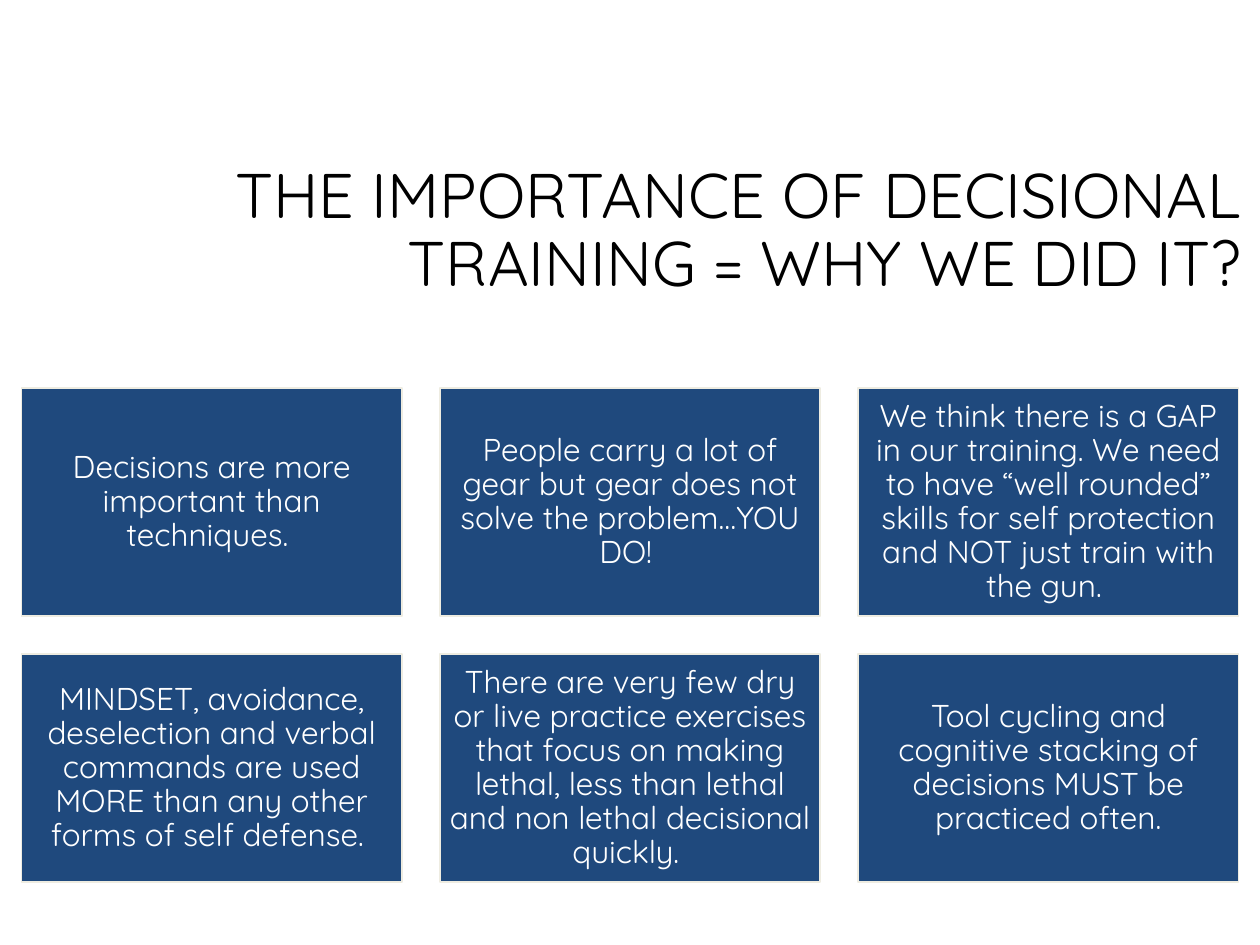
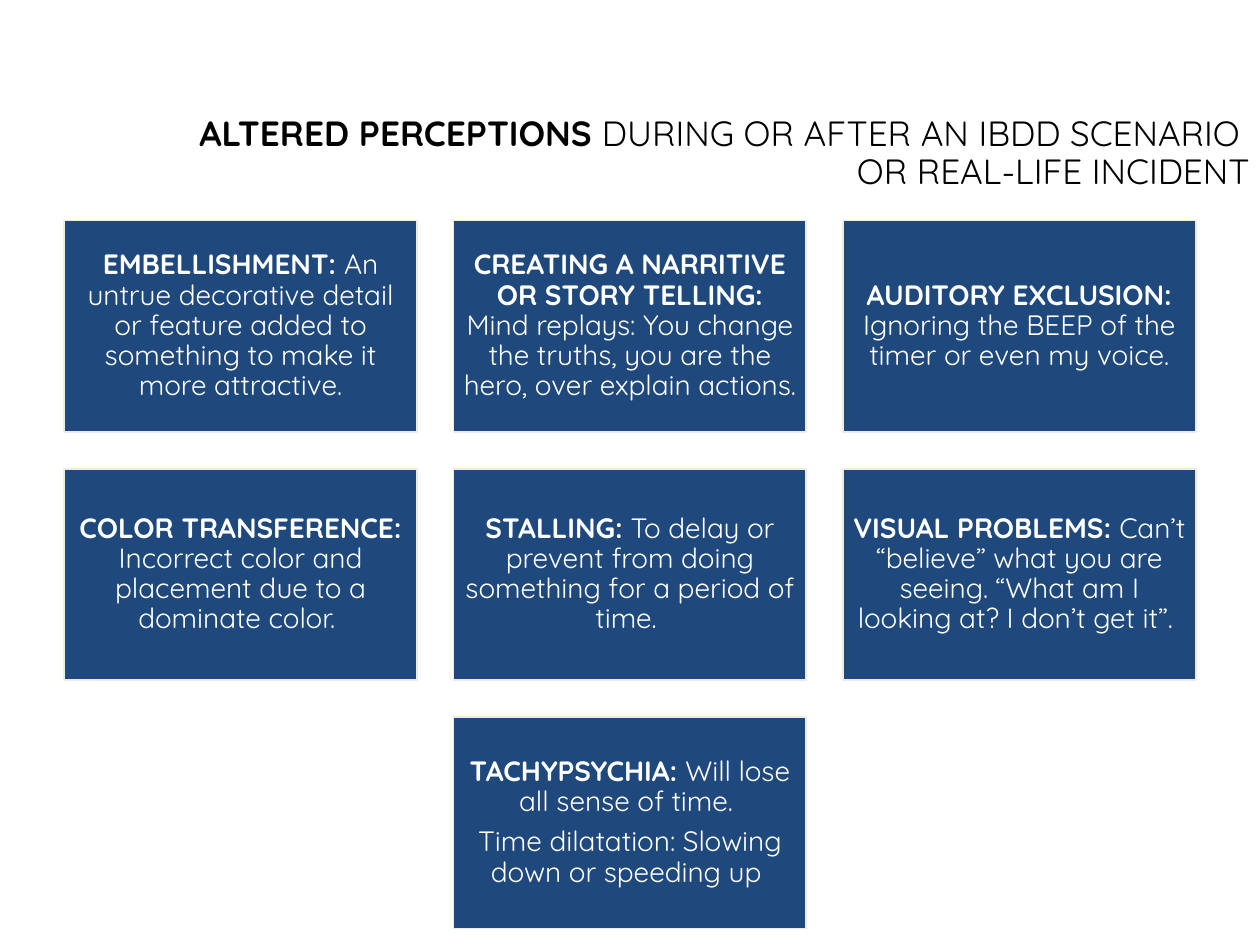
from pptx import Presentation
from pptx.dml.color import RGBColor
from pptx.enum.shapes import MSO_SHAPE
from pptx.enum.text import MSO_ANCHOR, MSO_AUTO_SIZE, PP_ALIGN
from pptx.util import Emu, Pt

WIDTH, HEIGHT = 1000, 750
NAVY, CREAM, WHITE, BLACK = "1F497D", "EEECE1", "FFFFFF", "000000"
FONT = "Quicksand"
PAD = 7


def px(n):
    return Emu(n * 9144)  # 100 px to the inch


def rgb(code):
    return RGBColor.from_string(code)


class Deck:
    def __init__(self):
        self.prs = Presentation()
        self.prs.slide_width, self.prs.slide_height = px(WIDTH), px(HEIGHT)
        self.slide = None

    def start(self):
        self.slide = self.prs.slides.add_slide(self.prs.slide_layouts[5])

    def text(self, para, bold, plain, size, color, align):
        """Fill one paragraph with an optional bold lead and plain text."""
        para.alignment = align
        para.line_spacing = 0.9
        font = para.font
        font.name, font.size, font.color.rgb = FONT, Pt(size), rgb(color)
        if bold:
            run = para.add_run()
            run.text = bold
            run.font.bold = True
        for i, line in enumerate(plain.split("\n")):
            if i:
                para.add_line_break()
            para.add_run().text = line

    def title(self, left, top, size, plain, bold=""):
        box = self.slide.shapes.title
        box.left, box.top, box.width, box.height = map(px, (left, top, 862, 145))
        frame = box.text_frame
        frame.auto_size = MSO_AUTO_SIZE.NONE
        frame.word_wrap = True
        frame.vertical_anchor = MSO_ANCHOR.MIDDLE
        self.text(frame.paragraphs[0], bold, plain, size, BLACK, PP_ALIGN.RIGHT)

    def card(self, left, top, width, height, size, paras):
        box = self.slide.shapes.add_shape(
            MSO_SHAPE.RECTANGLE, *map(px, (left, top, width, height)))
        box.shadow.inherit = False
        box.fill.solid()
        box.fill.fore_color.rgb = rgb(NAVY)
        box.line.color.rgb = rgb(CREAM)
        box.line.width = Pt(1)
        frame = box.text_frame
        frame.word_wrap = True
        frame.vertical_anchor = MSO_ANCHOR.MIDDLE
        frame.margin_left = frame.margin_right = px(PAD)
        frame.margin_top = frame.margin_bottom = px(PAD)
        for i, (bold, plain) in enumerate(paras):
            para = frame.add_paragraph() if i else frame.paragraphs[0]
            self.text(para, bold, plain, size, WHITE, PP_ALIGN.CENTER)
            para.space_after = Pt(size * 0.35)

    def grid(self, cards, top, width, height, gap, size, cols=3):
        """Lay cards out in rows, each row centred on the slide."""
        for first in range(0, len(cards), cols):
            row = cards[first:first + cols]
            left = (WIDTH - len(row) * width - (len(row) - 1) * gap) // 2
            for i, paras in enumerate(row):
                self.card(left + i * (width + gap), top, width, height, size, paras)
            top += height + gap


REASONS = [
    "Decisions are more important than techniques. ",
    "People carry a lot of gear but gear does not solve the problem…YOU DO! ",
    "We think there is a GAP in our training. We need to have “well rounded” "
    "skills for self protection and NOT just train with the gun. ",
    "MINDSET, avoidance, deselection and verbal commands are used MORE than "
    "any other forms of self defense. ",
    "There are very few dry or live practice exercises that focus on making "
    "lethal, less than lethal and non lethal decisional quickly. ",
    "Tool cycling and cognitive stacking of decisions MUST be practiced often.",
]

EFFECTS = [
    [("EMBELLISHMENT: ", "An untrue decorative detail or feature added to "
      "something to make it more attractive.")],
    [("CREATING A NARRITIVE OR STORY TELLING: ", "Mind replays: You change the "
      "truths, you are the hero, over explain actions.")],
    [("AUDITORY EXCLUSION: ", "Ignoring the BEEP of the timer or even my voice.")],
    [("COLOR TRANSFERENCE: ", "Incorrect color and placement due to a dominate "
      "color. ")],
    [("STALLING: ", "To delay or prevent from doing something for a period of "
      "time. ")],
    [("VISUAL PROBLEMS: ", "Can’t “believe” what you are seeing. “What am I "
      "looking at? I don’t get it”. ")],
    [("TACHYPSYCHIA: ", "Will lose all sense of time. "),
     ("", "Time dilatation: Slowing down or speeding up ")],
]


def main():
    deck = Deck()

    # Why decisional training matters
    deck.start()
    deck.title(133, 112, 36, "THE IMPORTANCE OF DECISIONAL TRAINING = WHY WE DID IT?")
    deck.grid([[("", text)] for text in REASONS], 308, 302, 181, 30, 18)

    # Altered perceptions
    deck.start()
    deck.title(140, 50, 20, "DURING OR AFTER AN IBDD SCENARIO \nOR REAL-LIFE INCIDENT",
               bold="ALTERED PERCEPTIONS ")
    deck.grid(EFFECTS, 175, 280, 168, 29, 16)

    deck.prs.save("out.pptx")


if __name__ == "__main__":
    main()
